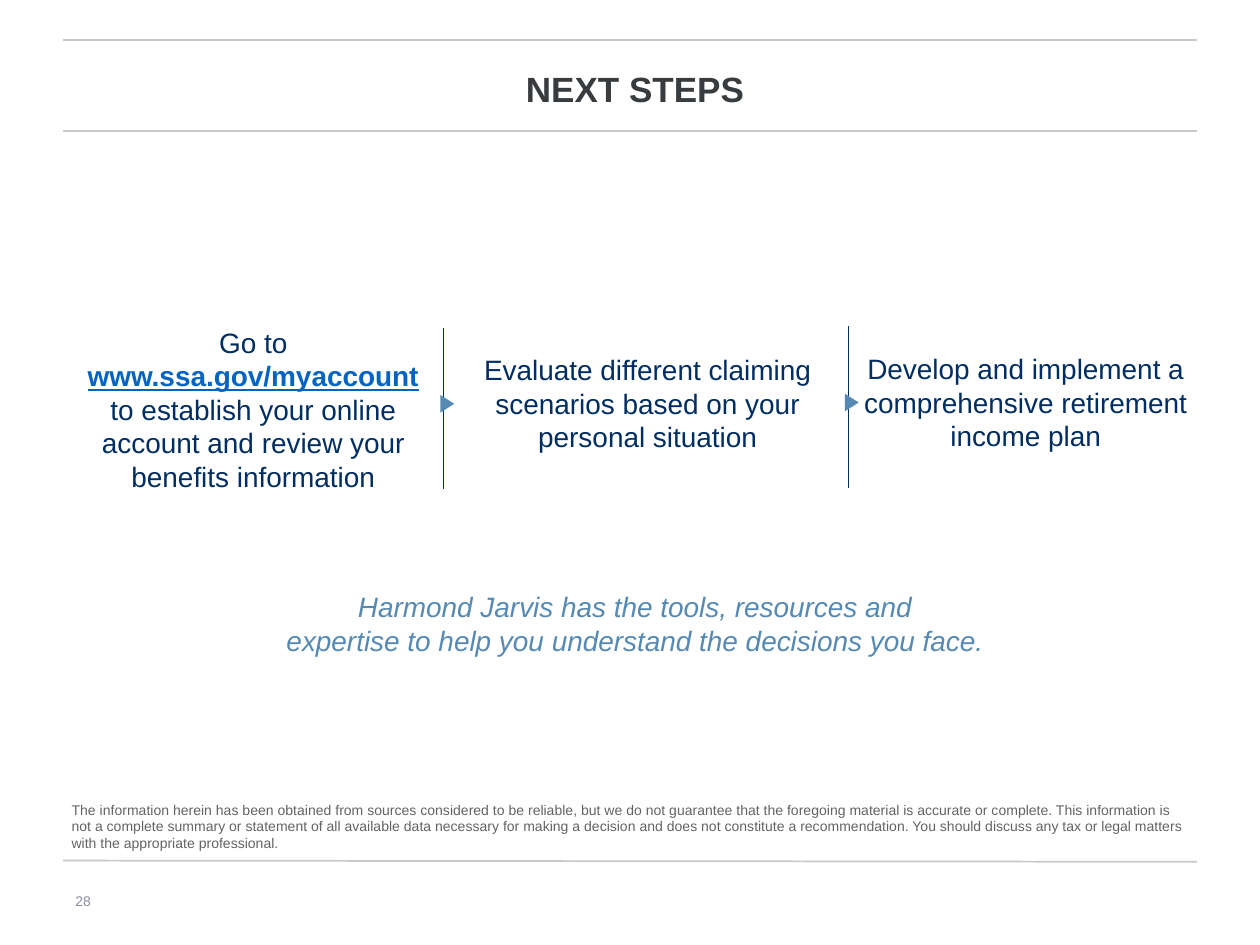
from pptx import Presentation
from pptx.dml.color import RGBColor
from pptx.enum.shapes import MSO_CONNECTOR as Connector, MSO_SHAPE as Shape
from pptx.enum.text import MSO_ANCHOR as Anchor, PP_ALIGN as Align
from pptx.util import Inches, Pt
from lxml.etree import SubElement
from pptx.oxml.ns import qn

NAVY = RGBColor(0x00, 0x2D, 0x62)
STEEL = RGBColor(0x56, 0x8A, 0xB4)
LINK = RGBColor(0x05, 0x63, 0xC1)
CHARCOAL = RGBColor(0x38, 0x3C, 0x3E)
GREY = RGBColor(0x63, 0x63, 0x63)
PAGE_GREY = RGBColor(0x89, 0x8E, 0x9E)
RULE_GREY = RGBColor(0xC8, 0xC8, 0xC8)


class SlideBuilder:
    font_name = "Arial"

    def __init__(self, slide):
        self.slide = slide

    def add_run(self, paragraph, text, size, color, bold=False, italic=False, underline=False):
        run = paragraph.add_run()
        run.text = text
        font = run.font
        font.name, font.size = self.font_name, Pt(size)
        font.bold, font.italic, font.underline = bold, italic, underline
        font.color.rgb = color

    def title(self, text, left, top, width, height):
        heading = self.slide.shapes.title
        heading.left, heading.top = Inches(left), Inches(top)
        heading.width, heading.height = Inches(width), Inches(height)
        frame = heading.text_frame
        frame.word_wrap = True
        frame.vertical_anchor = Anchor.BOTTOM
        paragraph = frame.paragraphs[0]
        paragraph.alignment = Align.CENTER
        self.add_run(paragraph, text, 20, CHARCOAL, bold=True)

    def text(self, left, top, width, height, align=Align.CENTER, anchor=Anchor.TOP, insets=(0.1, 0.05)):
        box = self.slide.shapes.add_textbox(Inches(left), Inches(top), Inches(width), Inches(height))
        frame = box.text_frame
        frame.word_wrap = True
        frame.vertical_anchor = anchor
        frame.margin_left = frame.margin_right = Inches(insets[0])
        frame.margin_top = frame.margin_bottom = Inches(insets[1])
        frame.paragraphs[0].alignment = align
        return frame

    def line(self, x1, y1, x2, y2, color, weight):
        line = self.slide.shapes.add_connector(
            Connector.STRAIGHT, Inches(x1), Inches(y1), Inches(x2), Inches(y2))
        line.line.color.rgb = color
        line.line.width = Pt(weight)
        SubElement(line._element.spPr, qn("a:effectLst"))

    def step_divider(self, x, top):
        self.line(x, top, x, top + 1.28, NAVY, 0.5)
        pointer = self.slide.shapes.add_shape(
            Shape.ISOSCELES_TRIANGLE, Inches(x - 0.04), Inches(top + 0.55), Inches(0.14), Inches(0.11))
        pointer.rotation = 90
        pointer.shadow.inherit = False
        pointer.fill.solid()
        pointer.fill.fore_color.rgb = STEEL
        pointer.line.fill.background()


def main():
    deck = Presentation()
    deck.slide_width, deck.slide_height = Inches(10), Inches(7.5)
    builder = SlideBuilder(deck.slides.add_slide(deck.slide_layouts[5]))

    for start, end in ((6.83, 6.84), (1.04, 1.04), (0.32, 0.32)):
        builder.line(0.5, start, 9.5, end, RULE_GREY, 1)

    page_number = builder.text(0.5, 6.95, 2.33, 0.4, Align.LEFT, Anchor.MIDDLE)
    builder.add_run(page_number.paragraphs[0], "28", 8, PAGE_GREY)
    builder.title("NEXT STEPS", 0.79, 0.42, 8.5, 0.5)

    account_step = builder.text(0.47, 2.58, 3.08, 1.35, insets=(0, 0))
    invitation = account_step.paragraphs[0]
    builder.add_run(invitation, "Go to ", 16, NAVY)
    builder.add_run(invitation, "www.ssa.gov/myaccount", 16, LINK, bold=True, underline=True)
    purpose = account_step.add_paragraph()
    purpose.alignment = Align.CENTER
    builder.add_run(purpose, "to establish your online account and review your benefits information", 16, NAVY)

    for left, top, width, step in (
        (3.54, 2.75, 3.2, "Evaluate different claiming scenarios based on your personal situation"),
        (6.7, 2.74, 2.88, "Develop and implement a comprehensive retirement income plan"),
    ):
        frame = builder.text(left, top, width, 0.91)
        builder.add_run(frame.paragraphs[0], step, 16, NAVY)

    promise = builder.text(0.5, 4.63, 9.08, 0.81, insets=(0, 0.05)).paragraphs[0]
    builder.add_run(promise, "Harmond Jarvis has the tools, resources and", 16, STEEL, italic=True)
    promise.add_line_break()
    builder.add_run(promise, "expertise to help you understand the decisions you face.", 16, STEEL, italic=True)

    for x, top in ((3.52, 2.6), (6.73, 2.59)):
        builder.step_divider(x, top)

    disclaimer = builder.text(0.47, 6.31, 9.11, 0.5, Align.LEFT)
    builder.add_run(
        disclaimer.paragraphs[0],
        "The information herein has been obtained from sources considered to be reliable, but we do not "
        "guarantee that the foregoing material is accurate or complete. This information is not a complete "
        "summary or statement of all available data necessary for making a decision and does not constitute "
        "a recommendation. You should discuss any tax or legal matters with the appropriate professional.",
        8, GREY)

    deck.save("out.pptx")


if __name__ == "__main__":
    main()
